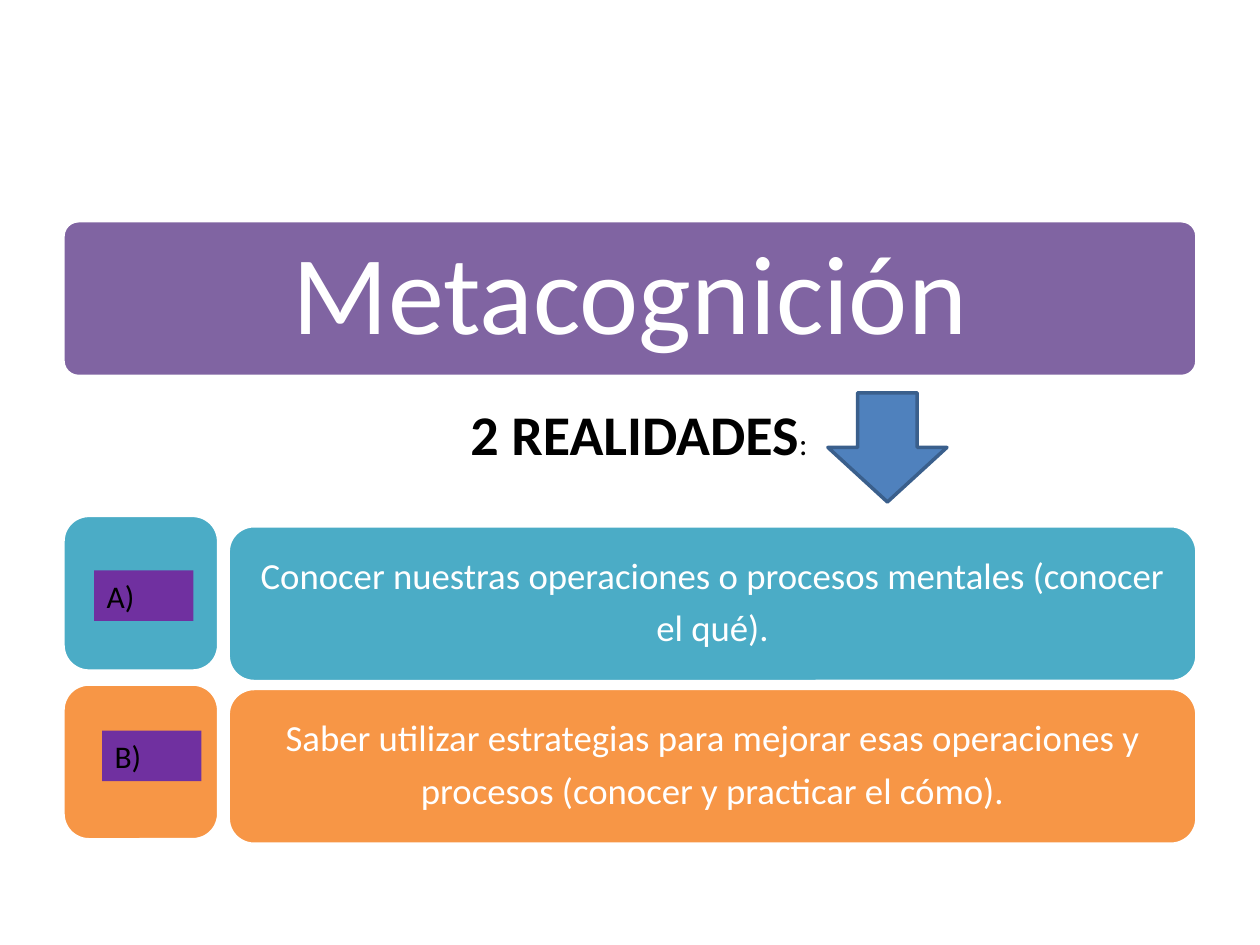
from dataclasses import dataclass

from pptx import Presentation
from pptx.dml.color import RGBColor
from pptx.enum.shapes import MSO_SHAPE
from pptx.enum.text import MSO_ANCHOR, MSO_AUTO_SIZE, PP_ALIGN
from pptx.util import Cm, Pt


@dataclass(frozen=True)
class Theme:
    """Hold the colours and type sizes of the deck."""
    font: str = "Calibri"
    white: str = "FFFFFF"
    black: str = "000000"
    banner: str = "8064A2"
    teal: str = "4BACC6"
    orange: str = "F79646"
    tag: str = "7030A0"
    arrow: str = "4F81BD"
    arrow_edge: str = "3A5F8C"
    title_size: int = 64
    heading_size: int = 32
    body_size: int = 21
    label_size: int = 18
    edge: int = 2


def apply(target, values):
    """Set every attribute named in values on the target."""
    for name, value in values.items():
        setattr(target, name, value)


class SlideBuilder:
    """Draw styled elements on the current slide."""

    def __init__(self, page, theme):
        """Keep the slide and its style."""
        self.page = page
        self.theme = theme

    def shape(self, kind, place, fill, edge=None, radius=None):
        """Add a filled preset shape."""
        box = self.page.shapes.add_shape(kind, *map(Cm, place))
        box.shadow.inherit = False
        box.fill.solid()
        box.fill.fore_color.rgb = RGBColor.from_string(fill)
        if edge:
            box.line.color.rgb = RGBColor.from_string(edge)
            box.line.width = Pt(self.theme.edge)
        else:
            box.line.fill.background()
        if radius:
            box.adjustments[0] = radius
        return box

    def fill_text(self, box, lines, color, align, anchor, margins=(0.25, 0.13), spacing=None):
        """Fill a box with lines of (text, size, bold) spans."""
        across, down = map(Cm, margins)
        frame = box.text_frame
        apply(frame, {"word_wrap": True, "auto_size": MSO_AUTO_SIZE.NONE,
                      "vertical_anchor": anchor, "margin_left": across,
                      "margin_right": across, "margin_top": down, "margin_bottom": down})
        for index, spans in enumerate(lines):
            para = frame.add_paragraph() if index else frame.paragraphs[0]
            apply(para, {"alignment": align, "space_before": Pt(0)})
            if spacing:
                apply(para, {"line_spacing": 0.9, "space_after": Pt(spacing)})
            for text, size, bold in spans:
                span = para.add_run()
                span.text = text
                apply(span.font, {"name": self.theme.font, "size": Pt(size), "bold": bold})
                span.font.color.rgb = RGBColor.from_string(color)

    def title(self, text, place):
        """Set the title placeholder on a rounded banner."""
        theme = self.theme
        banner = self.shape(MSO_SHAPE.ROUNDED_RECTANGLE, place, theme.banner, theme.white, 0.1)
        title = self.page.shapes.title
        title._element.addprevious(banner._element)
        apply(title, dict(zip(("left", "top", "width", "height"), map(Cm, place))))
        self.fill_text(title, [[(text, theme.title_size, False)]], theme.white,
                       PP_ALIGN.CENTER, MSO_ANCHOR.MIDDLE, (0.42, 0.33),
                       theme.title_size * 0.35)

    def heading(self, spans, place):
        """Add a centred heading."""
        box = self.page.shapes.add_textbox(*map(Cm, place))
        self.fill_text(box, [spans], self.theme.black, PP_ALIGN.CENTER, MSO_ANCHOR.TOP)

    def card(self, lines, place, fill):
        """Add a rounded card with optional centred lines."""
        theme = self.theme
        box = self.shape(MSO_SHAPE.ROUNDED_RECTANGLE, place, fill, theme.white, 0.167)
        if lines:
            spans = [[(line, theme.body_size, False)] for line in lines]
            self.fill_text(box, spans, theme.white, PP_ALIGN.CENTER, MSO_ANCHOR.MIDDLE,
                           (0.4, 0.4), theme.body_size * 0.35)

    def tag(self, text, left, top):
        """Add a small label."""
        theme = self.theme
        box = self.shape(MSO_SHAPE.RECTANGLE, (left, top, 2, 1.02), theme.tag)
        self.fill_text(box, [[(text, theme.label_size, False)]], theme.black,
                       PP_ALIGN.LEFT, MSO_ANCHOR.TOP)


def main():
    """Build and save the slide."""
    theme = Theme()
    deck = Presentation()
    apply(deck, {"slide_width": Cm(25.4), "slide_height": Cm(19.05)})
    page = deck.slides.add_slide(deck.slide_layouts[5])
    builder = SlideBuilder(page, theme)
    left, height = 1.27, 3.14
    builder.title("Metacognición", (left, 4.45, 22.86, height))
    rows = [
        ("A)", theme.teal, 10.39, 10.6, 1.9, 11.5,
         ["Conocer nuestras operaciones o procesos mentales (conocer", "el qué)."]),
        ("B)", theme.orange, 13.79, 13.88, 2.06, 14.73,
         ["Saber utilizar estrategias para mejorar esas operaciones y",
          "procesos (conocer y practicar el cómo)."]),
    ]
    for label, fill, square_top, card_top, tag_left, tag_top, lines in rows:
        builder.card([], (left, square_top, height, height), fill)
        builder.card(lines, (4.6, card_top, 19.53, height), fill)
        builder.tag(label, tag_left, tag_top)
    builder.heading([("2 REALIDADES", theme.heading_size, True),
                     (":", theme.label_size, False)], (3.05, 7.92, 19.66, 1.62))
    builder.shape(MSO_SHAPE.DOWN_ARROW, (16.69, 7.92, 2.4, 2.2), theme.arrow, theme.arrow_edge)
    deck.save("out.pptx")


if __name__ == "__main__":
    main()
